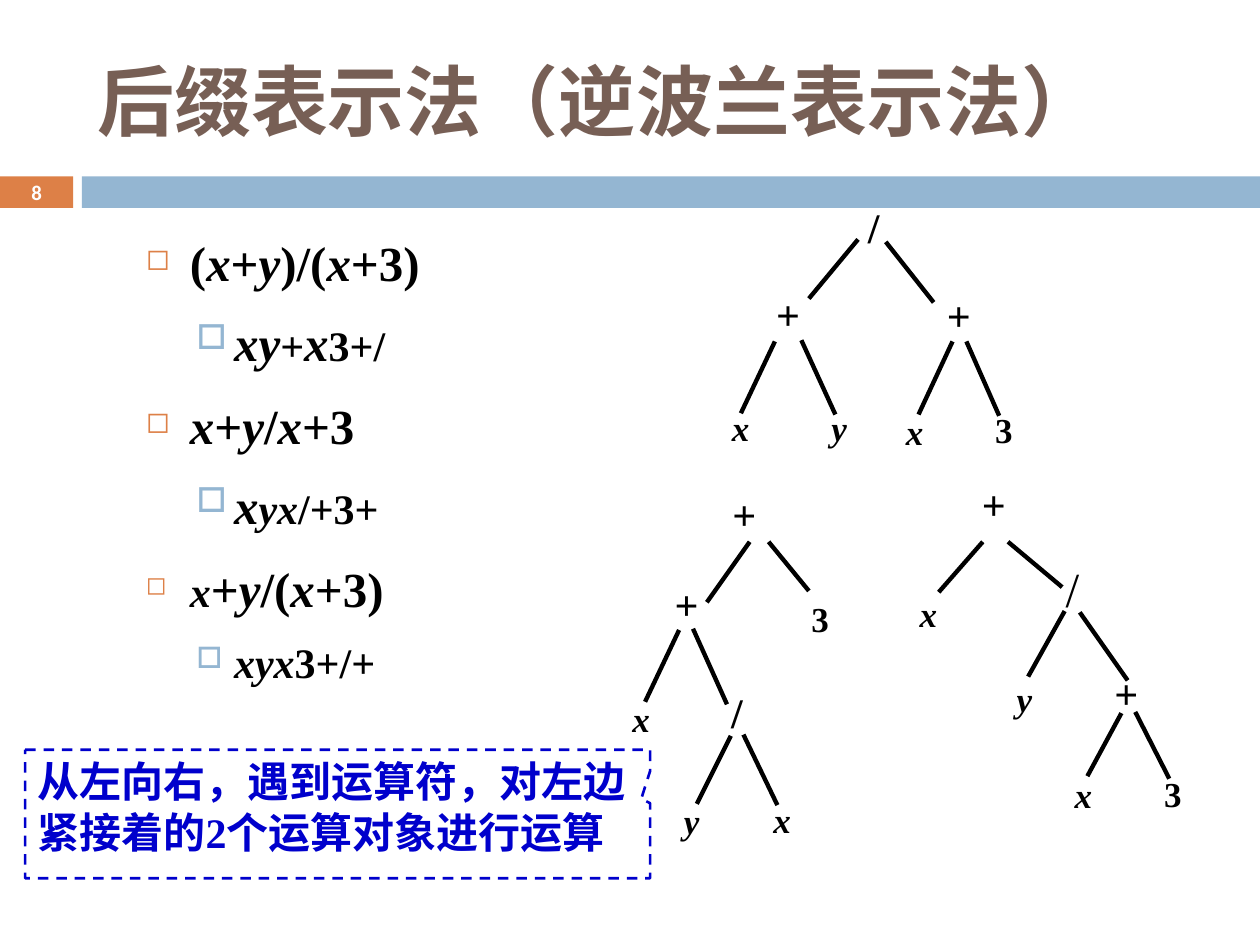
import itertools

import pptx
import pptx.dml.color
import pptx.enum.dml
import pptx.enum.lang
import pptx.enum.shapes
import pptx.enum.text
import pptx.oxml
import pptx.oxml.ns
import pptx.util

Inches, Pt = pptx.util.Inches, pptx.util.Pt
RGBColor = pptx.dml.color.RGBColor
ALIGN = pptx.enum.text.PP_ALIGN
ANCHOR = pptx.enum.text.MSO_ANCHOR
SHAPE = pptx.enum.shapes.MSO_SHAPE
qn = pptx.oxml.ns.qn

BLACK = RGBColor(0, 0, 0)
WHITE = RGBColor(0xFF, 0xFF, 0xFF)
ORANGE = RGBColor(0xDD, 0x80, 0x47)
SKY = RGBColor(0x94, 0xB6, 0xD2)
BROWN = RGBColor(0x77, 0x5F, 0x55)
BLUE = RGBColor(0, 0, 0xCC)
SERIF, SANS = "Times New Roman", "Calibri"


def add_run(paragraph, text, size=24, color=BLACK, font=SERIF, bold=True, italic=False):
    run = paragraph.add_run()
    run.text = text
    run.font.size, run.font.name = Pt(size), font
    run.font.bold, run.font.italic = bold, italic
    run.font.color.rgb = color
    run.font.language_id = pptx.enum.lang.MSO_LANGUAGE_ID.SIMPLIFIED_CHINESE


def add_formula(paragraph, text, size):
    """Variables are italic, everything else upright."""
    for is_variable, letters in itertools.groupby(text, lambda c: c in "xy"):
        add_run(paragraph, "".join(letters), size=size, italic=is_variable)


class SlideBuilder:
    def __init__(self, slide):
        self.slide = slide

    def title(self, box, parts):
        title = self.slide.shapes.title
        title.left, title.top, title.width, title.height = map(Inches, box)
        frame = title.text_frame
        frame.word_wrap = True
        frame.vertical_anchor = ANCHOR.MIDDLE
        frame.paragraphs[0].alignment = ALIGN.LEFT
        for text, font in parts:
            add_run(frame.paragraphs[0], text, size=44, color=BROWN, font=font)

    def band(self, box, fill):
        band = self.slide.shapes.add_shape(SHAPE.RECTANGLE, *map(Inches, box))
        band.shadow.inherit = False
        band.fill.solid()
        band.fill.fore_color.rgb = fill
        band.line.fill.background()

    def text_frame(self, box, parent=None, anchor=ANCHOR.TOP):
        shapes = (parent or self.slide).shapes
        frame = shapes.add_textbox(*map(Inches, box)).text_frame
        frame.word_wrap = True
        frame.vertical_anchor = anchor
        return frame

    def label(self, box, text, align, parent=None, anchor=ANCHOR.TOP, **style):
        paragraph = self.text_frame(box, parent, anchor).paragraphs[0]
        paragraph.alignment = align
        add_run(paragraph, text, **style)

    def bullet(self, paragraph, level):
        indent, hang, before, char, color, percent = [
            (0.35, 0.35, 7, "◻", ORANGE, 60),
            (0.7, 0.3, 5.5, "□", SKY, 70),
        ][level]
        paragraph.level = level
        paragraph.alignment = ALIGN.JUSTIFY
        paragraph.line_spacing = 1.2
        paragraph.space_before = Pt(before)
        properties = paragraph._p.get_or_add_pPr()
        properties.set("marL", str(Inches(indent)))
        properties.set("indent", str(-Inches(hang)))
        bullet_color = properties.makeelement(qn("a:buClr"), {})
        pptx.oxml.parse_xml  # noqa: B018
        bullet_color.append(bullet_color.makeelement(qn("a:srgbClr"), {"val": str(color)}))
        properties.append(bullet_color)
        for tag, attributes in (
            ("a:buSzPct", {"val": str(percent * 1000)}),
            ("a:buChar", {"char": char}),
        ):
            properties.append(properties.makeelement(qn(tag), attributes))

    def formulas(self, box, rows):
        frame = self.text_frame(box)
        for index, (level, parts) in enumerate(rows):
            paragraph = frame.add_paragraph() if index else frame.paragraphs[0]
            self.bullet(paragraph, level)
            for text, size in parts:
                add_formula(paragraph, text, size)

    def tree(self, nodes, edges):
        group = self.slide.shapes.add_group_shape()
        for text, left, top, width, *override in nodes:
            operator = text in "+/"
            style = {"size": 24 if operator else 20, "italic": text in "xy",
                     "align": ALIGN.CENTER if operator else ALIGN.JUSTIFY}
            if override:
                style.update(override[0])
            self.label((left, top, width, 0.4), text, parent=group, **style)
        for ends in edges:
            edge = group.shapes.add_connector(
                pptx.enum.shapes.MSO_CONNECTOR.STRAIGHT, *map(Inches, ends))
            edge.line.color.rgb = BLACK
            edge.line.width = Pt(2.5)
            properties = edge._element.spPr
            properties.append(properties.makeelement(qn("a:effectLst"), {}))

    def callout(self, box, text):
        callout = self.slide.shapes.add_shape(SHAPE.RECTANGULAR_CALLOUT, *map(Inches, box))
        callout.adjustments[0], callout.adjustments[1] = 0.486, -0.119
        callout.shadow.inherit = False
        callout.fill.background()
        callout.line.color.rgb = BLUE
        callout.line.width = Pt(1.5)
        callout.line.dash_style = pptx.enum.dml.MSO_LINE.DASH
        frame = callout.text_frame
        frame.word_wrap = True
        frame.vertical_anchor = ANCHOR.TOP
        frame.paragraphs[0].alignment = ALIGN.LEFT
        add_run(frame.paragraphs[0], text, color=BLUE)


# Each row: level, then pieces of formula with their size
FORMULAS = [
    (0, [("(x+y)/(x+3)", 28)]),
    (1, [("xy", 28), ("+", 24), ("x", 28), ("3+/", 24)]),
    (0, [("x+y/x+3", 28)]),
    (1, [("x", 28), ("yx/+3+", 24)]),
    (0, [("x", 24), ("+y/(x+3)", 28)]),
    (1, [("xyx3+/+", 24)]),
]

# Each tree: nodes (text, left, top, width, override), edges (x1, y1, x2, y2)
RIGHT = {"align": ALIGN.RIGHT}
TREES = [
    ([("/", 6.62, 1.55, 0.63), ("+", 6.02, 2.24, 0.47), ("+", 7.41, 2.25, 0.4),
      ("x", 5.71, 3.18, 0.32), ("y", 6.5, 3.18, 0.55),
      ("x", 7.09, 3.21, 0.32), ("3", 7.8, 3.19, 0.55)],
     [(6.81, 1.9, 6.42, 2.37), (7.03, 1.92, 7.41, 2.4),
      (6.15, 2.71, 5.88, 3.28), (6.36, 2.7, 6.63, 3.29),
      (7.56, 2.71, 7.29, 3.29), (7.67, 2.71, 7.93, 3.3)]),
    ([("+", 5.55, 3.83, 0.55, RIGHT), ("+", 5.25, 4.54, 0.4), ("3", 6.34, 4.69, 0.55),
      ("x", 4.92, 5.49, 0.32), ("/", 5.65, 5.4, 0.4),
      ("y", 5.33, 6.3, 0.32), ("x", 6.04, 6.29, 0.55)],
     [(5.95, 4.3, 5.61, 4.78), (6.1, 4.3, 6.42, 4.69),
      (5.39, 5, 5.12, 5.57), (5.5, 4.99, 5.77, 5.59),
      (5.8, 5.84, 5.53, 6.38), (5.9, 5.83, 6.17, 6.39)]),
    ([("+", 7.53, 3.75, 0.55, RIGHT), ("x", 7.2, 4.65, 0.32),
      ("/", 8.36, 4.38, 0.55, {"size": 28, "bold": False, "align": ALIGN.JUSTIFY}),
      ("y", 7.97, 5.33, 0.55), ("+", 8.74, 5.25, 0.4),
      ("x", 8.43, 6.09, 0.32), ("3", 9.14, 6.08, 0.55)],
     [(7.8, 4.3, 7.45, 4.7), (8, 4.3, 8.43, 4.66),
      (8.45, 4.85, 8.16, 5.37), (8.57, 4.86, 8.95, 5.4),
      (8.9, 5.66, 8.63, 6.16), (9.01, 5.65, 9.28, 6.18)]),
]


def main():
    deck = pptx.Presentation()
    deck.slide_width, deck.slide_height = Inches(10), Inches(7.5)
    builder = SlideBuilder(deck.slides.add_slide(deck.slide_layouts[5]))

    # Heading and bands
    builder.title((0.67, 0.25, 8.92, 1.08),
                  [("后缀表示法（逆", SERIF), ("波兰表示法", SANS), ("）", SERIF)])
    builder.band((0, 1.4, 0.58, 0.25), ORANGE)
    builder.band((0.65, 1.4, 9.35, 0.25), SKY)
    builder.label((0, 1.39, 0.58, 0.27), "8", ALIGN.CENTER, anchor=ANCHOR.MIDDLE,
                  size=11.9, color=WHITE, font=SANS)

    # Infix formulas with their postfix forms, and the expression trees
    builder.formulas((1.06, 1.7, 3.7, 4.09), FORMULAS)
    for nodes, edges in TREES:
        builder.tree(nodes, edges)

    # Evaluation rule
    builder.callout((0.2, 5.95, 4.96, 1.02),
                    "从左向右，遇到运算符，对左边紧接着的2个运算对象进行运算")
    deck.save("out.pptx")


if __name__ == "__main__":
    main()
